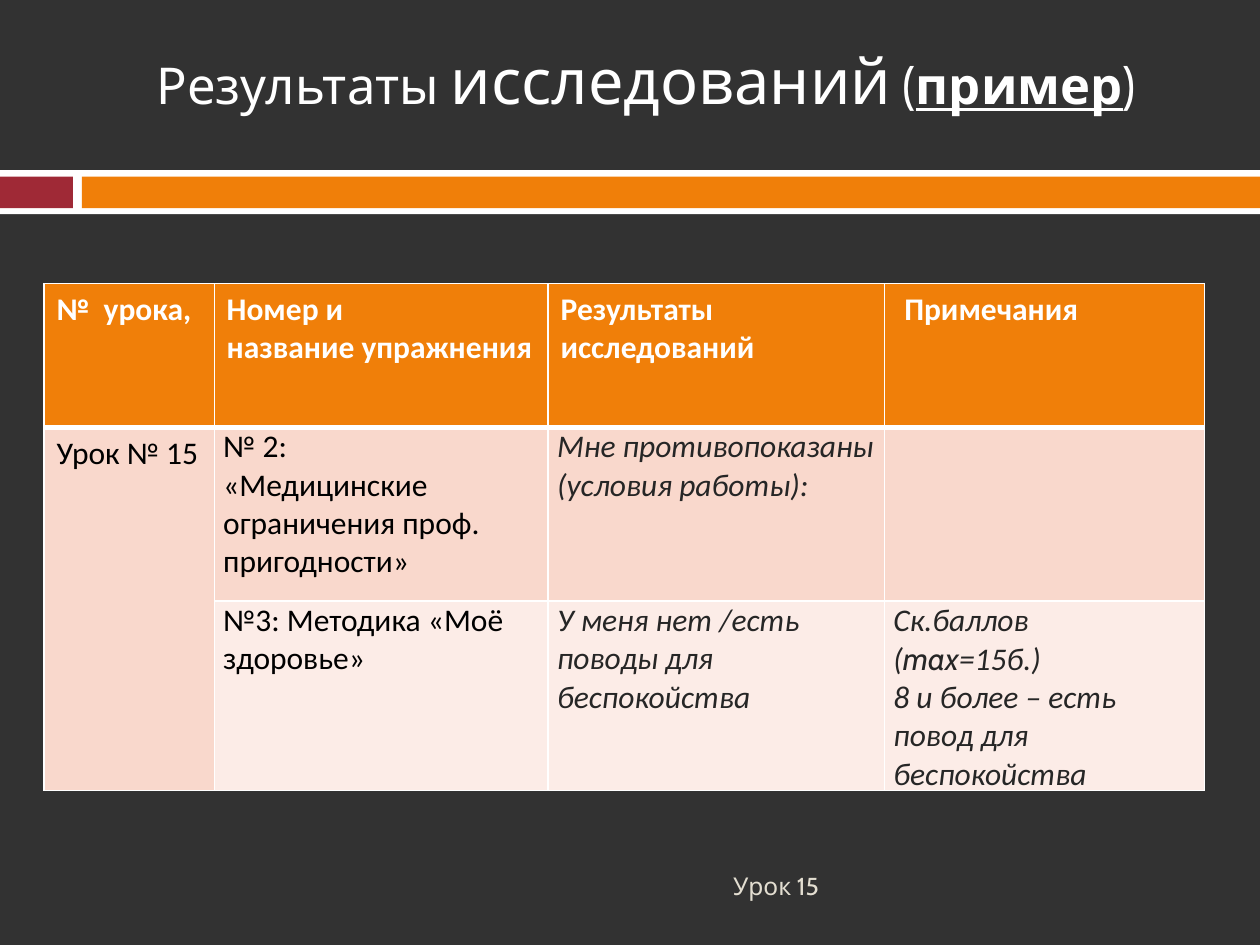
from lxml import etree
from pptx import Presentation
from pptx.dml.color import RGBColor
from pptx.enum.shapes import MSO_SHAPE
from pptx.enum.text import MSO_ANCHOR, MSO_AUTO_SIZE, PP_ALIGN
from pptx.oxml.ns import qn
from pptx.util import Cm, Pt

RECTANGLE = MSO_SHAPE.RECTANGLE
TOP, MIDDLE = MSO_ANCHOR.TOP, MSO_ANCHOR.MIDDLE
CENTER, RIGHT = PP_ALIGN.CENTER, PP_ALIGN.RIGHT
NO_AUTOFIT = MSO_AUTO_SIZE.NONE
TITLE_ONLY = 5

DARK, WHITE, BLACK = "323232", "FFFFFF", "000000"
ORANGE, RED = "F07F09", "9F2936"
BAND_DARK, BAND_LIGHT = "F9D8CC", "FCECE7"
RESULT_GREY, FOOTER_BEIGE = "262626", "E3DED1"
HEADING_FONT, TABLE_FONT = "Cabin", "Calibri"

COLUMN_WIDTHS = (3.43, 6.73, 6.78, 6.45)
ROW_HEIGHTS = (2.9, 3.5, 3.5)
WIDE_MARGINS = (0.25, 0.13)
NARROW_MARGINS = (0.18, 0)

HEADERS = (
    ["№  урока,"],
    ["Номер и", "название упражнения"],
    ["Результаты", "исследований"],
    ["Примечания"],
)
EXERCISES = (
    ["№ 2:", "«Медицинские ограничения проф.", "пригодности»"],
    ["№3: Методика «Моё здоровье»"],
)
RESULTS = (
    ["Мне противопоказаны (условия работы):"],
    ["У меня нет /есть поводы для беспокойства"],
)
NOTES = (
    [],
    ["Ск.баллов", "(max=15б.)", "8 и более – есть повод для беспокойства"],
)


def rgb(color):
    return RGBColor.from_string(color)


def add_text(paragraph, text, size=18, font=TABLE_FONT, color=BLACK,
             bold=False, italic=False, underline=False):
    run = paragraph.add_run()
    run.text = text
    run.font.size = Pt(size)
    run.font.name = font
    run.font.color.rgb = rgb(color)
    run.font.bold = bold
    run.font.italic = italic
    run.font.underline = underline


def add_band(slide, left, top, width, height, color):
    shape = slide.shapes.add_shape(RECTANGLE, Cm(left), Cm(top), Cm(width), Cm(height))
    shape.shadow.inherit = False
    shape.fill.solid()
    shape.fill.fore_color.rgb = rgb(color)
    shape.line.fill.background()


def add_title(slide):
    title = slide.shapes.title
    title.left, title.top, title.width, title.height = Cm(1.7), Cm(0.71), Cm(22.66), Cm(2.69)
    frame = title.text_frame
    frame.word_wrap = True
    frame.auto_size = NO_AUTOFIT
    frame.vertical_anchor = TOP
    paragraph = frame.paragraphs[0]
    paragraph.alignment = CENTER
    paragraph.space_before = Pt(7)
    for text, size, strong in (
        ("Результаты ", 29, False),
        ("исследований", 36, False),
        (" (", 29, False),
        ("пример", 29, True),
        (")", 29, False),
    ):
        add_text(paragraph, text, size=size, font=HEADING_FONT, color=WHITE,
                 bold=strong, underline=strong)


def add_footer(slide):
    box = slide.shapes.add_textbox(Cm(1.7), Cm(17.35), Cm(15.06), Cm(1.02))
    frame = box.text_frame
    frame.word_wrap = True
    frame.vertical_anchor = MIDDLE
    paragraph = frame.paragraphs[0]
    paragraph.alignment = RIGHT
    add_text(paragraph, "Урок 15", size=14, font=HEADING_FONT, color=FOOTER_BEIGE)


def set_borders(cell, top=1, bottom=1):
    """Draw white borders; widths in points."""
    properties = cell._tc.get_or_add_tcPr()
    for side, width in (("L", 1), ("R", 1), ("T", top), ("B", bottom)):
        line = etree.SubElement(properties, qn(f"a:ln{side}"), w=str(Pt(width)))
        fill = etree.SubElement(line, qn("a:solidFill"))
        etree.SubElement(fill, qn("a:srgbClr"), val=WHITE)


def fill_cell(cell, lines, background, margins=WIDE_MARGINS, top=1, bottom=1, **text_format):
    """Set borders, fill, margins (horizontal, vertical) and one paragraph per line."""
    set_borders(cell, top, bottom)
    cell.fill.solid()
    cell.fill.fore_color.rgb = rgb(background)
    horizontal, vertical = margins
    cell.margin_left = cell.margin_right = Cm(horizontal)
    cell.margin_top = cell.margin_bottom = Cm(vertical)
    frame = cell.text_frame
    for index, line in enumerate(lines):
        paragraph = frame.add_paragraph() if index else frame.paragraphs[0]
        before, latin, after = line.partition("max")
        add_text(paragraph, before, **text_format)
        if latin:
            add_text(paragraph, latin, font=HEADING_FONT, **text_format)
            add_text(paragraph, after, **text_format)


def add_results_table(slide):
    frame = slide.shapes.add_table(
        len(ROW_HEIGHTS), len(COLUMN_WIDTHS), Cm(0.89), Cm(5.72),
        Cm(sum(COLUMN_WIDTHS)), Cm(sum(ROW_HEIGHTS)))
    table = frame.table
    for column, width in zip(table.columns, COLUMN_WIDTHS):
        column.width = Cm(width)
    for row, height in zip(table.rows, ROW_HEIGHTS):
        row.height = Cm(height)

    for column, lines in enumerate(HEADERS):
        fill_cell(table.cell(0, column), lines, ORANGE, bottom=3, color=WHITE, bold=True)
    table.cell(0, 3).margin_left = Cm(0.4)

    lesson = table.cell(1, 0)
    lesson.merge(table.cell(2, 0))
    fill_cell(lesson, ["Урок № 15"], BAND_DARK, top=3)
    set_borders(table.cell(2, 0))

    rows = zip(EXERCISES, RESULTS, NOTES, (BAND_DARK, BAND_LIGHT), (3, 1))
    for row, (exercise, result, note, background, top) in enumerate(rows, start=1):
        fill_cell(table.cell(row, 1), exercise, background, NARROW_MARGINS, top=top)
        for column, lines in ((2, result), (3, note)):
            fill_cell(table.cell(row, column), lines, background, NARROW_MARGINS,
                      top=top, color=RESULT_GREY, italic=True)


def main():
    presentation = Presentation()
    presentation.slide_width, presentation.slide_height = Cm(25.4), Cm(19.05)
    slide = presentation.slides.add_slide(presentation.slide_layouts[TITLE_ONLY])
    slide.background.fill.solid()
    slide.background.fill.fore_color.rgb = rgb(DARK)

    add_band(slide, 0, 3.43, 25.4, 0.89, WHITE)
    add_band(slide, 0, 3.56, 1.47, 0.64, RED)
    add_band(slide, 1.65, 3.56, 23.75, 0.64, ORANGE)
    add_footer(slide)
    add_title(slide)
    add_results_table(slide)
    presentation.save("out.pptx")


if __name__ == "__main__":
    main()
